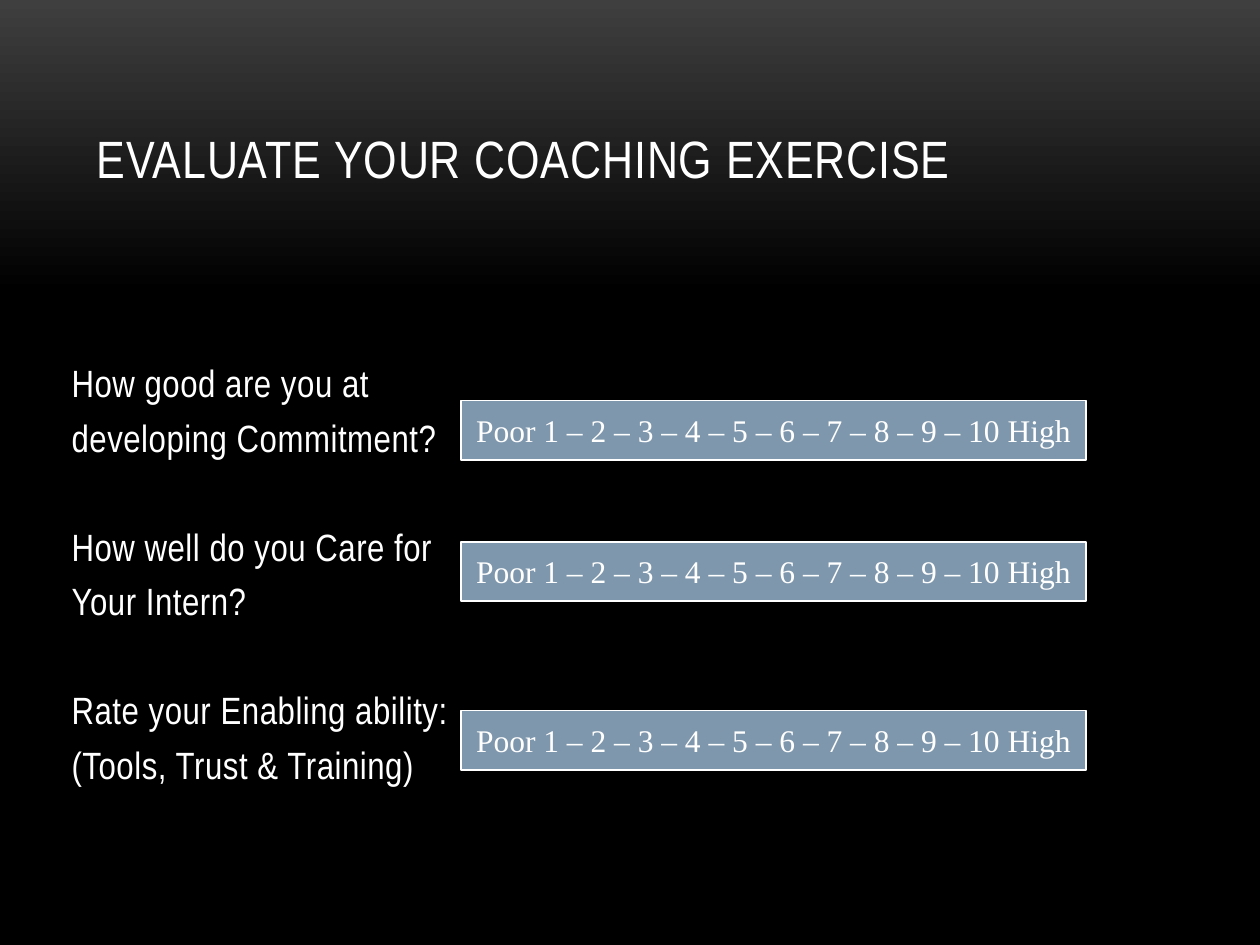
"""Build the coaching self-evaluation slide with three rating scales."""
from pptx import Presentation
from pptx.dml.color import RGBColor
from pptx.enum.shapes import MSO_SHAPE as Preset
from pptx.enum.text import MSO_ANCHOR as Anchor, PP_ALIGN as Align
from pptx.util import Inches, Pt

WHITE = RGBColor(0xFF, 0xFF, 0xFF)
BLACK = RGBColor(0x00, 0x00, 0x00)
CHARCOAL = RGBColor(0x3F, 0x3F, 0x3F)
STEEL_BLUE = RGBColor(0x7E, 0x97, 0xAD)

SCALE = "Poor 1 – 2 – 3 – 4 – 5 – 6 – 7 – 8 – 9 – 10 High"
QUESTIONS = [
    ("How good are you at", "developing Commitment?"),
    ("How well do you Care for", "Your Intern?"),
    ("Rate your Enabling ability:", "(Tools, Trust & Training)"),
]


def write_text(paragraph, text, font="Arial Narrow", size=18, tracking=0,
               align=Align.LEFT, before=0, line_height=None):
    paragraph.alignment = align
    paragraph.space_before = Pt(before)
    if line_height:
        paragraph.line_spacing = Pt(line_height)
    run = paragraph.add_run()
    run.text = text
    run.font.name = font
    run.font.size = Pt(size)
    run.font.color.rgb = WHITE
    if tracking:
        run._r.get_or_add_rPr().set("spc", str(round(tracking * 100)))


presentation = Presentation()
presentation.slide_width = Inches(10)
presentation.slide_height = Inches(7.5)
slide = presentation.slides.add_slide(presentation.slide_layouts[6])

background = slide.background.fill
background.gradient()
background.gradient_angle = 270
for stop, position, color in zip(background.gradient_stops, (0, 0.31), (CHARCOAL, BLACK)):
    stop.position = position
    stop.color.rgb = color

title = slide.shapes.add_textbox(Inches(0.67), Inches(0.3), Inches(8.67), Inches(1.25))
title.text_frame.word_wrap = True
title.text_frame.vertical_anchor = Anchor.BOTTOM
write_text(title.text_frame.paragraphs[0], "EVALUATE YOUR COACHING EXERCISE",
           size=30, tracking=0.5)

body = slide.shapes.add_textbox(Inches(0.47), Inches(2.89), Inches(9.08), Inches(3.75))
frame = body.text_frame
frame.word_wrap = True
for number, question in enumerate(QUESTIONS):
    for line, text in enumerate(question):
        first = number == 0 and line == 0
        paragraph = frame.paragraphs[0] if first else frame.add_paragraph()
        before = 0 if first else 11.1 if line else 42.3
        write_text(paragraph, text, size=21.7, tracking=0.3, before=before, line_height=20)

for top in (3.18, 4.3, 5.64):
    scale = slide.shapes.add_shape(Preset.RECTANGLE, Inches(3.66), Inches(top),
                                   Inches(4.96), Inches(0.47))
    scale.shadow.inherit = False
    scale.fill.solid()
    scale.fill.fore_color.rgb = STEEL_BLUE
    scale.line.color.rgb = WHITE
    scale.line.width = Pt(1)
    scale.text_frame.word_wrap = False
    scale.text_frame.vertical_anchor = Anchor.MIDDLE
    write_text(scale.text_frame.paragraphs[0], SCALE, font="Times New Roman",
               align=Align.CENTER)

presentation.save("out.pptx")
